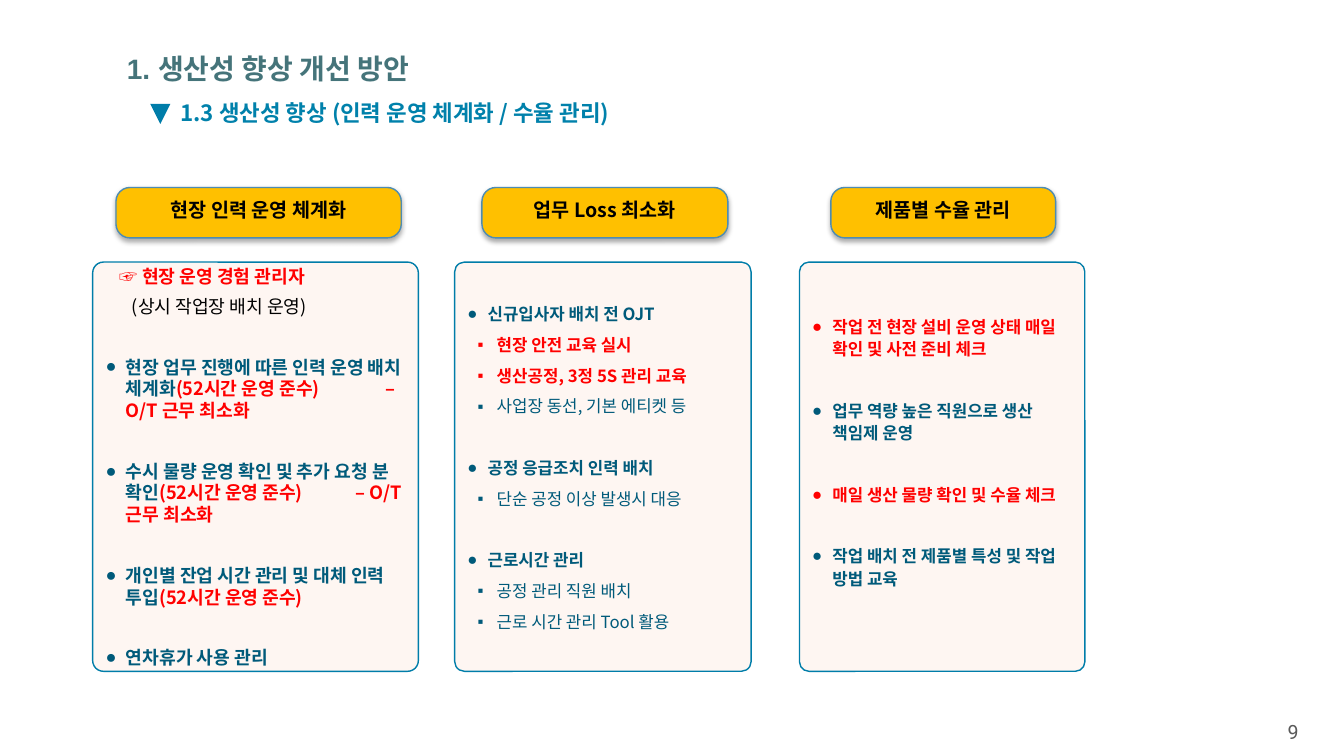
import pptx
import pptx.dml.color
import pptx.enum.shapes
import pptx.enum.text
import pptx.oxml
import pptx.oxml.ns
import pptx.util
from lxml import etree

RGB = pptx.dml.color.RGBColor
SHAPE = pptx.enum.shapes.MSO_SHAPE
ALIGN = pptx.enum.text.PP_ALIGN
MIDDLE = pptx.enum.text.MSO_ANCHOR.MIDDLE
Pt, Inches = pptx.util.Pt, pptx.util.Inches
qn = pptx.oxml.ns.qn

BLACK = RGB(0x00, 0x00, 0x00)
RED = RGB(0xFF, 0x00, 0x00)
NAVY = RGB(0x00, 0x5A, 0x7A)
TITLE_TEAL = RGB(0x45, 0x74, 0x7A)
SUBTITLE_BLUE = RGB(0x00, 0x81, 0xAB)
PANEL_BLUE = RGB(0x00, 0x7D, 0xA9)
HEADING_BLUE = RGB(0x4D, 0x8C, 0xB3)
AMBER = RGB(0xFF, 0xC0, 0x00)
CREAM = RGB(0xFE, 0xF6, 0xF2)
GREY = RGB(0x59, 0x59, 0x59)
KOREAN = "Noto Sans CJK KR"

HEADING_TOP, HEADING_HEIGHT = 24.8, 6.67
PANEL_TOP, PANEL_HEIGHT = 34.67, 54.13
PARAGRAPH_GAP = 6
SHADOW = (
    '<a:effectLst xmlns:a="http://schemas.openxmlformats.org/drawingml/2006/main">'
    '<a:outerShdw blurRad="44450" dist="27940" dir="5400000" algn="ctr" rotWithShape="0">'
    '<a:srgbClr val="000000"><a:alpha val="32000"/></a:srgbClr>'
    '</a:outerShdw></a:effectLst>'
)

deck = pptx.Presentation()
deck.slide_width, deck.slide_height = Inches(13.33), Inches(7.5)
slide = deck.slides.add_slide(deck.slide_layouts[6])


def frame(left, top, width, height):
    """Turn percentages of the slide's width and height into lengths."""
    across, down = deck.slide_width / 100, deck.slide_height / 100
    return [round(n) for n in (left * across, top * down, width * across, height * down)]


def write(paragraph, runs, size, face=KOREAN):
    """Add (text, colour, bold) runs to a paragraph."""
    for text, colour, bold in runs:
        run = paragraph.add_run()
        run.text = text
        for key, value in {"size": Pt(size), "bold": bold, "name": face}.items():
            setattr(run.font, key, value)
        run.font.color.rgb = colour
        etree.SubElement(run.font._element, qn("a:ea")).set("typeface", KOREAN)


# Title, subtitle and page number
captions = [
    ((8.7, 6.13, 85.15, 5.87), "1. 생산성 향상 개선 방안", TITLE_TEAL, 20, True, "Arial", ALIGN.LEFT),
    ((12.68, 12.4, 65.57, 4.93), "1.3 생산성 향상 (인력 운영 체계화 / 수율 관리)",
     SUBTITLE_BLUE, 16, True, KOREAN, ALIGN.LEFT),
    ((93.92, 94.53, 4.58, 4.53), "9", GREY, 14, False, "Roboto", ALIGN.CENTER),
]
for place, text, colour, size, bold, face, align in captions:
    caption = slide.shapes.add_textbox(*frame(*place)).text_frame
    caption.word_wrap = True
    caption.vertical_anchor = MIDDLE
    caption.paragraphs[0].alignment = align
    write(caption.paragraphs[0], [(text, colour, bold)], size, face)

marker = slide.shapes.add_shape(SHAPE.ISOSCELES_TRIANGLE, *frame(11.18, 13.73, 1.5, 2.67))
marker.rotation = 180
marker.shadow.inherit = False
marker.fill.solid()
marker.fill.fore_color.rgb = PANEL_BLUE
marker.line.fill.background()

# Paragraph kinds: left margin, first-line indent (inches), bullet
KINDS = {
    "lead": (0.14, 0, None),
    "note": (0.26, 0, None),
    "main": (0.2, -0.2, "●"),
    "sub": (0.29, -0.19, "▪"),
}

# Each paragraph: kind, blank lines above, runs, tab stop (inches)
staffing = [
    ("lead", 0, [("☞", RED, True), (" 현장 운영 경험 관리자", RED, True)], None),
    ("note", 0, [("(상시 작업장 배치 운영)", BLACK, False)], None),
    ("main", 1, [("현장 업무 진행에 따른 인력 운영 배치 체계화", NAVY, True),
                 ("(52시간 운영 준수)\t– O/T 근무 최소화", RED, True)], 2.77),
    ("main", 1, [("수시 물량 운영 확인 및 추가 요청 분 확인", NAVY, True),
                 ("(52시간 운영 준수)\t– O/T 근무 최소화", RED, True)], 2.48),
    ("main", 1, [("개인별 잔업 시간 관리 및 대체 인력 투입", NAVY, True),
                 ("(52시간 운영 준수)", RED, True)], None),
    ("main", 1, [("연차휴가 사용 관리", NAVY, True)], None),
]
loss = [
    ("main", 0, [("신규입사자 배치 전 OJT", NAVY, True)], None),
    ("sub", 0, [("현장 안전 교육 실시", RED, True)], None),
    ("sub", 0, [("생산공정, 3정 5S 관리 교육", RED, True)], None),
    ("sub", 0, [("사업장 동선, 기본 에티켓 등", NAVY, False)], None),
    ("main", 1, [("공정 응급조치 인력 배치", NAVY, True)], None),
    ("sub", 0, [("단순 공정 이상 발생시 대응", NAVY, False)], None),
    ("main", 1, [("근로시간 관리", NAVY, True)], None),
    ("sub", 0, [("공정 관리 직원 배치", NAVY, False)], None),
    ("sub", 0, [("근로 시간 관리 Tool 활용", NAVY, False)], None),
]
yield_control = [
    ("main", 0, [("작업 전 현장 설비 운영 상태 매일 확인 및 사전 준비 체크", RED, True)], None),
    ("main", 1, [("업무 역량 높은 직원으로 생산 책임제 운영", NAVY, True)], None),
    ("main", 1, [("매일 생산 물량 확인 및 수율 체크", RED, True)], None),
    ("main", 1, [("작업 배치 전 제품별 특성 및 작업 방법 교육", NAVY, True)], None),
]

# Heading, its left and width, panel left and width, text size, line pitch, bottom inset, content
columns = [
    ("현장 인력 운영 체계화", (8.63, 21.23), (6.9, 24.23), 13, 15.6, 3.6, staffing),
    ("업무 Loss 최소화", (35.86, 18.3), (33.83, 22.06), 12, 16, 3.6, loss),
    ("제품별 수율 관리", (61.82, 16.73), (59.49, 21.23), 12, 16, 25.6, yield_control),
]
for heading, (head_left, head_width), (left, width), size, pitch, inset, content in columns:
    label = slide.shapes.add_shape(
        SHAPE.ROUNDED_RECTANGLE, *frame(head_left, HEADING_TOP, head_width, HEADING_HEIGHT))
    panel = slide.shapes.add_shape(
        SHAPE.ROUNDED_RECTANGLE, *frame(left, PANEL_TOP, width, PANEL_HEIGHT))
    for box, fill, outline, corner in [(label, AMBER, HEADING_BLUE, 0.277),
                                       (panel, CREAM, PANEL_BLUE, 0.033)]:
        box.adjustments[0] = corner
        box.fill.solid()
        box.fill.fore_color.rgb = fill
        box.line.color.rgb = outline
        box.line.width = Pt(1)
        box.text_frame.word_wrap = True
        box.text_frame.vertical_anchor = MIDDLE
    label._element.spPr.append(pptx.oxml.parse_xml(SHADOW))
    panel.shadow.inherit = False

    title_line = label.text_frame.paragraphs[0]
    title_line.alignment = ALIGN.CENTER
    title_line.line_spacing = Pt(13)
    write(title_line, [(heading, BLACK, True)], 14)

    panel.text_frame.margin_bottom = Pt(inset)
    for index, (kind, blanks, runs, tab) in enumerate(content):
        item = panel.text_frame.add_paragraph() if index else panel.text_frame.paragraphs[0]
        gap = PARAGRAPH_GAP + blanks * (pitch + PARAGRAPH_GAP)
        for key, value in {"alignment": ALIGN.LEFT, "line_spacing": Pt(pitch),
                           "space_before": Pt(gap)}.items():
            setattr(item, key, value)
        margin, indent, bullet = KINDS[kind]
        props = item._p.get_or_add_pPr()
        props.set("marL", str(Inches(margin)))
        props.set("indent", str(Inches(indent)))
        if bullet:
            etree.SubElement(props, qn("a:buFont")).set("typeface", "Arial")
            etree.SubElement(props, qn("a:buChar")).set("char", bullet)
        if tab:
            stop = etree.SubElement(etree.SubElement(props, qn("a:tabLst")), qn("a:tab"))
            stop.set("pos", str(Inches(tab)))
            stop.set("algn", "l")
        write(item, runs, size)

deck.save("out.pptx")
